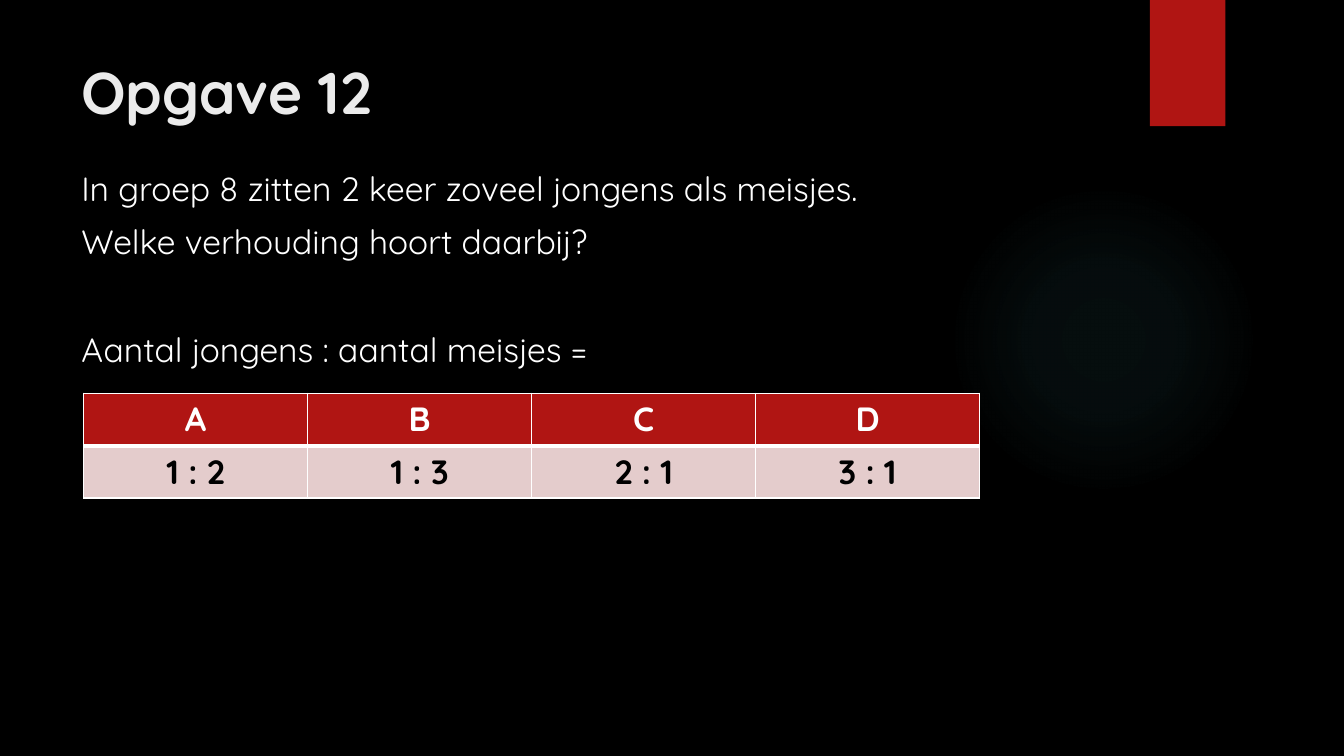
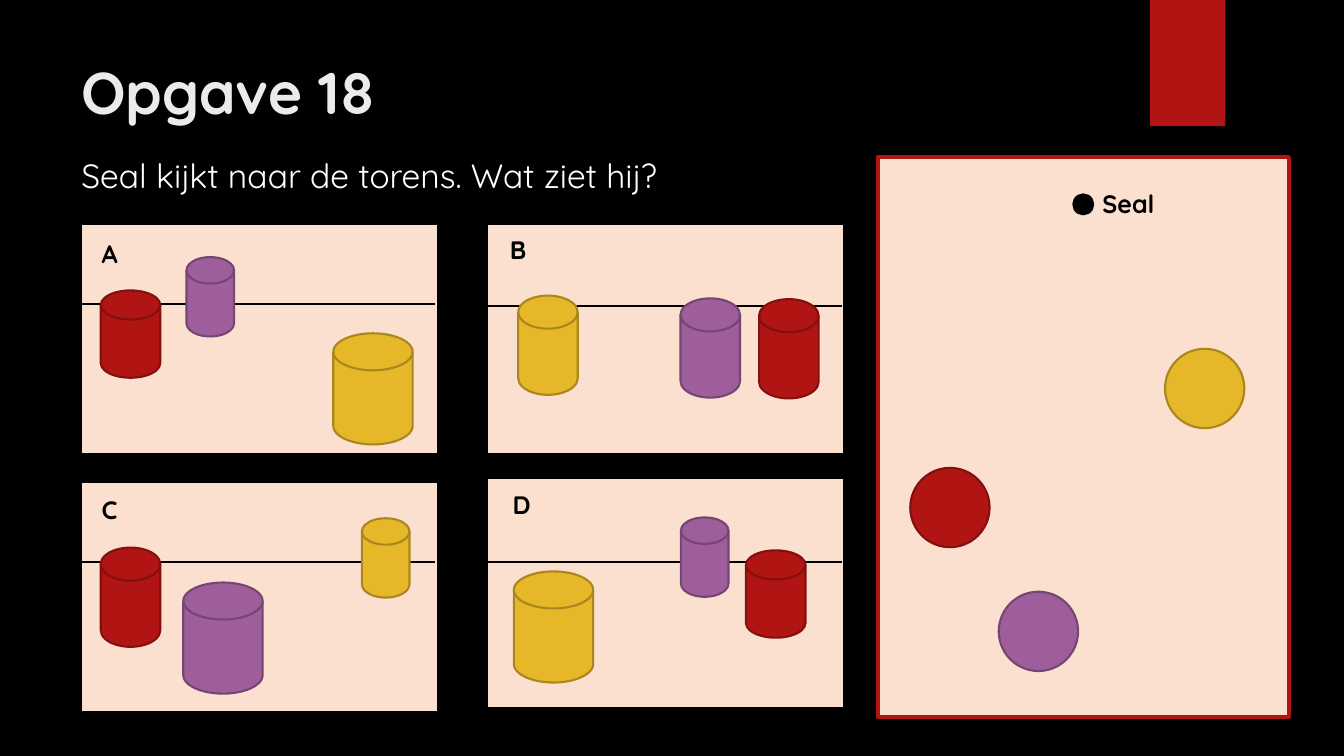
from lxml.etree import SubElement
from pptx import Presentation
from pptx.dml.color import RGBColor as Color
from pptx.enum.shapes import MSO_CONNECTOR as Connector, MSO_SHAPE as Shape
from pptx.enum.text import PP_ALIGN as Align
from pptx.oxml import parse_xml
from pptx.oxml.ns import nsdecls, qn
from pptx.util import Cm, Pt

FONT = "Quicksand"
COLORS = {
    "black": "000000", "white": "FFFFFF", "title": "EBEBEB",
    "panel": "FBE0CF", "cell": "E4CCCC", "glow": "50B9C1",
    "red": "B01513", "red edge": "82100E",
    "purple": "9E5E9B", "purple edge": "754673",
    "yellow": "E6B729", "yellow edge": "AA871E",
}
# Tower sizes: width, height
SIZES = {"small": (1.2, 2), "short": (1.5, 2.2), "tall": (1.5, 2.5), "large": (2, 2.8)}


def color(name):
    return Color.from_string(COLORS[name])


def write(frame, *lines, size=24, ink="white", bold=False, align=Align.LEFT, gaps=()):
    """Write one paragraph per line; gaps are the spaces before lines 2, 3, ..."""
    for index, line in enumerate(lines):
        para = frame.add_paragraph() if index else frame.paragraphs[0]
        para.alignment = align
        if index:
            para.space_before = Pt(gaps[index - 1])
        span = para.add_run()
        span.text = line
        span.font.name = FONT
        span.font.size = Pt(size)
        span.font.bold = bold
        span.font.color.rgb = color(ink)


class Lesson:
    def __init__(self):
        self.deck = Presentation()
        self.deck.slide_width, self.deck.slide_height = Cm(33.87), Cm(19.05)
        background = self.deck.slide_master.background.fill
        background.solid()
        background.fore_color.rgb = color("black")
        self.page = None

    def add_page(self, title, glow=False):
        self.page = self.deck.slides.add_slide(self.deck.slide_layouts[6])
        if glow:
            self.glow(23.9, 4.65, 7.82)
        self.shape(Shape.RECTANGLE, 28.98, 0, 1.9, 3.18, "red")
        self.text(1.8, 1.27, 26.14, 3.89, title, size=42, ink="title", bold=True)

    def text(self, left, top, width, height, *lines, **style):
        box = self.page.shapes.add_textbox(Cm(left), Cm(top), Cm(width), Cm(height))
        box.text_frame.word_wrap = True
        write(box.text_frame, *lines, **style)

    def label(self, left, top, text):
        self.text(left, top, 3.78, 1.02, text, size=18, ink="black", bold=True)

    def shape(self, kind, left, top, width, height, fill, edge=None, weight=1.5):
        shape = self.page.shapes.add_shape(kind, Cm(left), Cm(top), Cm(width), Cm(height))
        shape.shadow.inherit = False
        shape.fill.solid()
        shape.fill.fore_color.rgb = color(fill)
        if edge:
            shape.line.color.rgb = color(edge)
            shape.line.width = Pt(weight)
        else:
            shape.line.fill.background()
        return shape

    def glow(self, left, top, size):
        shape = self.shape(Shape.OVAL, left, top, size, size, "glow")
        stops = "".join(
            f'<a:gs pos="{place * 1000}"><a:srgbClr val="{COLORS["glow"]}">'
            f'<a:alpha val="{alpha * 1000}"/></a:srgbClr></a:gs>'
            for place, alpha in ((0, 7), (36, 6), (69, 0)))
        gradient = parse_xml(
            f'<a:gradFill {nsdecls("a")} rotWithShape="1"><a:gsLst>{stops}</a:gsLst>'
            '<a:path path="circle"><a:fillToRect l="50000" t="50000" r="50000" b="50000"/>'
            '</a:path></a:gradFill>')
        properties = shape._element.spPr
        properties.replace(properties.find(qn("a:solidFill")), gradient)

    def line(self, left, top, width):
        line = self.page.shapes.add_connector(
            Connector.STRAIGHT, Cm(left), Cm(top), Cm(left + width), Cm(top))
        line.line.color.rgb = color("black")
        line.line.width = Pt(1.5)
        SubElement(line._element.spPr, qn("a:effectLst"))

    def disc(self, left, top, paint):
        self.shape(Shape.OVAL, left, top, 2, 2, paint, f"{paint} edge")

    def tower(self, left, top, paint, size):
        self.shape(Shape.FLOWCHART_MAGNETIC_DISK, left, top, *SIZES[size],
                   paint, f"{paint} edge")

    def view(self, left, top, horizon, letter, letter_at, towers):
        self.shape(Shape.RECTANGLE, left, top, 9, 5.8, "panel", "black")
        self.line(left, horizon, 8.94)
        for tower in towers:
            self.tower(*tower)
        self.label(*letter_at, letter)

    def table(self, left, top, width, row_height, rows):
        table = self.page.shapes.add_table(
            len(rows), len(rows[0]), Cm(left), Cm(top),
            Cm(width), Cm(row_height * len(rows))).table
        for row_index, row in enumerate(rows):
            header = row_index == 0
            for column_index, text in enumerate(row):
                cell = table.cell(row_index, column_index)
                self.borders(cell, top=1 if header else 3, bottom=3 if header else 1)
                cell.fill.solid()
                cell.fill.fore_color.rgb = color("red" if header else "cell")
                write(cell.text_frame, text, bold=True, align=Align.CENTER,
                      ink="white" if header else "black")

    def borders(self, cell, top, bottom):
        properties = cell._tc.get_or_add_tcPr()
        for side, weight in (("L", 1), ("R", 1), ("T", top), ("B", bottom)):
            border = SubElement(properties, qn(f"a:ln{side}"), w=str(Pt(weight)))
            fill = SubElement(border, qn("a:solidFill"))
            SubElement(fill, qn("a:srgbClr"), val=COLORS["white"])


def ratio_page(lesson):
    lesson.add_page("Opgave 12", glow=True)
    lesson.text(1.8, 4.11, 29.24, 13.1,
                "In groep 8 zitten 2 keer zoveel jongens als meisjes.",
                "Welke verhouding hoort daarbij?",
                "Aantal jongens : aantal meisjes =",
                gaps=(9, 48))
    lesson.table(2.11, 9.91, 22.58, 1.32,
                 [["A", "B", "C", "D"], ["1 : 2", "1 : 3", "2 : 1", "3 : 1"]])


def towers_page(lesson):
    lesson.add_page("Opgave 18")
    lesson.text(1.8, 3.78, 29.24, 13.1, "Seal kijkt naar de torens. Wat ziet hij?")

    # Map seen from above
    lesson.shape(Shape.RECTANGLE, 22.12, 3.96, 10.36, 14.1, "panel", "red", weight=3)
    lesson.disc(25.17, 14.91, "purple")
    lesson.disc(29.36, 8.79, "yellow")
    lesson.disc(22.94, 11.79, "red")
    lesson.shape(Shape.OVAL, 27.05, 4.9, 0.5, 0.5, "black", "black")
    lesson.label(27.53, 4.62, "Seal")

    # Four possible views
    left, right = 2.03, 12.27
    lesson.view(left, 5.64, 7.67, "A", (2.31, 5.89), [
        (4.7, 6.48, "purple", "small"),
        (8.4, 8.4, "yellow", "large"),
        (2.54, 7.32, "red", "short")])
    lesson.view(right, 5.64, 7.72, "B", (12.6, 5.78), [
        (17.15, 7.52, "purple", "tall"),
        (19.13, 7.54, "red", "tall"),
        (13.06, 7.45, "yellow", "tall")])
    lesson.view(left, 12.15, 14.17, "C", (2.31, 12.32), [
        (4.62, 14.68, "purple", "large"),
        (2.54, 13.8, "red", "tall"),
        (9.12, 13.06, "yellow", "small")])
    lesson.view(right, 12.05, 14.17, "D", (12.67, 12.2), [
        (18.8, 13.87, "red", "short"),
        (12.95, 14.4, "yellow", "large"),
        (17.16, 13.04, "purple", "small")])


def main():
    lesson = Lesson()
    ratio_page(lesson)
    towers_page(lesson)
    lesson.deck.save("out.pptx")


if __name__ == "__main__":
    main()
